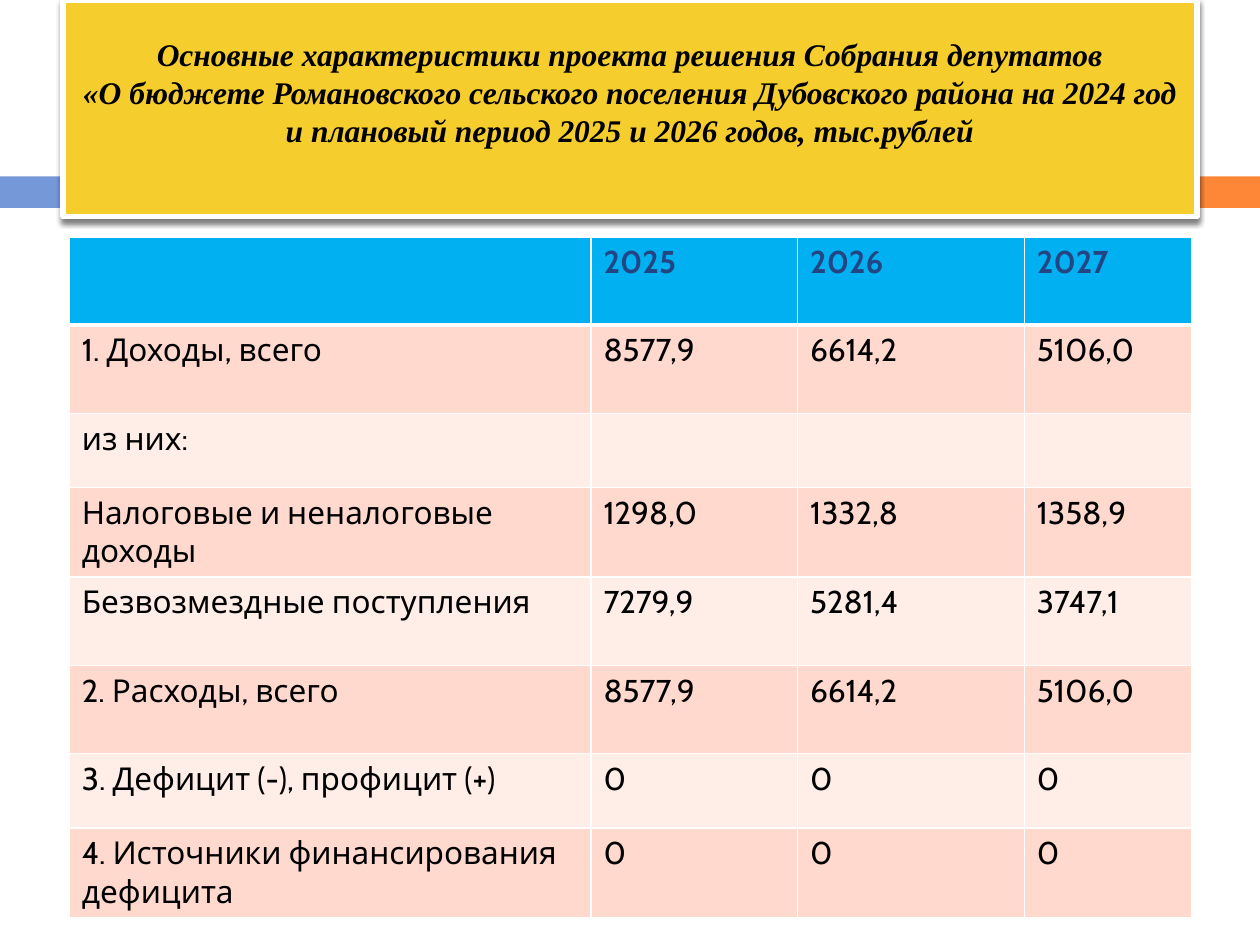
from dataclasses import dataclass

import pptx
import pptx.dml.color
import pptx.enum.shapes
import pptx.enum.text
import pptx.oxml
import pptx.oxml.ns
import pptx.util
from pptx.dml.color import RGBColor
from pptx.util import Inches, Pt

WHITE = RGBColor(0xFF, 0xFF, 0xFF)
BLACK = RGBColor(0x00, 0x00, 0x00)
YELLOW = RGBColor(0xF5, 0xCD, 0x2D)
BLUE = RGBColor(0x75, 0x98, 0xD9)
ORANGE = RGBColor(0xFE, 0x86, 0x37)
HEADER_FILL = RGBColor(0x00, 0xB0, 0xF0)
HEADER_TEXT = RGBColor(0x24, 0x45, 0x83)
BAND_FILLS = (RGBColor(0xFF, 0xED, 0xE8), RGBColor(0xFF, 0xD9, 0xCE))

TITLE = (
    "Основные характеристики проекта решения Собрания депутатов\v"
    "«О бюджете Романовского сельского поселения Дубовского района на 2024 год "
    "и плановый период 2025 и 2026 годов, тыс.рублей"
)
COLUMN_WIDTHS = (4.14, 1.64, 1.8, 1.33)
TALL_ROW, SHORT_ROW = 0.7, 0.59


@dataclass(frozen=True)
class Box:
    left: float
    top: float
    width: float
    height: float
    fill: RGBColor


@dataclass(frozen=True)
class BudgetRow:
    texts: tuple[str, str, str, str]
    height: float = TALL_ROW


STRIPES = (
    Box(0, 1.4, 0.58, 0.25, BLUE),
    Box(0.65, 1.4, 9.35, 0.25, ORANGE),
)
TITLE_BOX = Box(0.5, 0, 9, 1.72, YELLOW)
BUDGET_ROWS = (
    BudgetRow(("", "2025", "2026", "2027")),
    BudgetRow(("1. Доходы, всего", "8577,9", "6614,2", "5106,0")),
    BudgetRow(("из них:", "", "", ""), SHORT_ROW),
    BudgetRow(("Налоговые и неналоговые доходы", "1298,0", "1332,8", "1358,9")),
    BudgetRow(("Безвозмездные поступления", "7279,9", "5281,4", "3747,1")),
    BudgetRow(("2. Расходы, всего", "8577,9", "6614,2", "5106,0")),
    BudgetRow(("3. Дефицит (-), профицит (+)", "0", "0", "0"), SHORT_ROW),
    BudgetRow(("4. Источники финансирования дефицита", "0", "0", "0")),
)


def add_box(slide: pptx.slide.Slide, box: Box) -> pptx.shapes.autoshape.Shape:
    shape = slide.shapes.add_shape(
        pptx.enum.shapes.MSO_SHAPE.RECTANGLE,
        Inches(box.left), Inches(box.top), Inches(box.width), Inches(box.height),
    )
    shape.fill.solid()
    shape.fill.fore_color.rgb = box.fill
    shape.line.fill.background()
    shape.shadow.inherit = False
    return shape


def format_runs(
    paragraph: pptx.text.text._Paragraph, font_name: str, color: RGBColor,
    bold: bool, italic: bool = False,
) -> None:
    for run in paragraph.runs:
        run.font.name = font_name
        run.font.size = Pt(18)
        run.font.color.rgb = color
        run.font.bold = bold
        run.font.italic = italic


def add_shadow(shape: pptx.shapes.autoshape.Shape) -> None:
    effects = shape._element.spPr.find(pptx.oxml.ns.qn("a:effectLst"))
    effects.append(pptx.oxml.parse_xml(
        f'<a:outerShdw {pptx.oxml.ns.nsdecls("a")} blurRad="{Pt(3)}" dist="{Pt(2)}" '
        f'dir="5400000" rotWithShape="0"><a:srgbClr val="{BLACK}">'
        '<a:alpha val="50000"/></a:srgbClr></a:outerShdw>'
    ))


def add_title(slide: pptx.slide.Slide) -> None:
    shape = add_box(slide, TITLE_BOX)
    shape.line.color.rgb = WHITE
    shape.line.width = Pt(3)
    add_shadow(shape)
    text_frame = shape.text_frame
    text_frame.word_wrap = True
    text_frame.vertical_anchor = pptx.enum.text.MSO_ANCHOR.MIDDLE
    text_frame.margin_bottom = Inches(0.31)
    paragraph = text_frame.paragraphs[0]
    paragraph.text = TITLE
    paragraph.alignment = pptx.enum.text.PP_ALIGN.CENTER
    format_runs(paragraph, "Times New Roman", BLACK, bold=True, italic=True)


def set_borders(cell: pptx.table._Cell, top: float, bottom: float) -> None:
    """Draw white borders; top and bottom are widths in points."""
    widths = {"lnL": 1, "lnR": 1, "lnT": top, "lnB": bottom}
    properties = cell._tc.get_or_add_tcPr()
    for position, (side, width) in enumerate(widths.items()):
        properties.insert(position, pptx.oxml.parse_xml(
            f'<a:{side} {pptx.oxml.ns.nsdecls("a")} w="{Pt(width)}">'
            f'<a:solidFill><a:srgbClr val="{WHITE}"/></a:solidFill></a:{side}>'
        ))


def add_budget_table(slide: pptx.slide.Slide) -> None:
    table = slide.shapes.add_table(
        len(BUDGET_ROWS), len(COLUMN_WIDTHS), Inches(0.55), Inches(1.88),
        Inches(sum(COLUMN_WIDTHS)), Inches(sum(row.height for row in BUDGET_ROWS)),
    ).table
    table.first_row = False
    table.horz_banding = False
    for column, width in zip(table.columns, COLUMN_WIDTHS):
        column.width = Inches(width)
    for row_index, row in enumerate(BUDGET_ROWS):
        is_header = row_index == 0
        table.rows[row_index].height = Inches(row.height)
        for column_index, text in enumerate(row.texts):
            cell = table.cell(row_index, column_index)
            cell.fill.solid()
            cell.fill.fore_color.rgb = HEADER_FILL if is_header else BAND_FILLS[row_index % 2]
            set_borders(cell, top=3 if row_index == 1 else 1, bottom=3 if is_header else 1)
            cell.text_frame.text = text
            format_runs(
                cell.text_frame.paragraphs[0], "Cabin",
                HEADER_TEXT if is_header else BLACK, bold=is_header,
            )


def main() -> None:
    presentation = pptx.Presentation()
    presentation.slide_width = Inches(10)
    presentation.slide_height = Inches(7.5)
    slide = presentation.slides.add_slide(presentation.slide_layouts[6])
    for stripe in STRIPES:
        add_box(slide, stripe)
    add_title(slide)
    add_budget_table(slide)
    presentation.save("out.pptx")


if __name__ == "__main__":
    main()
